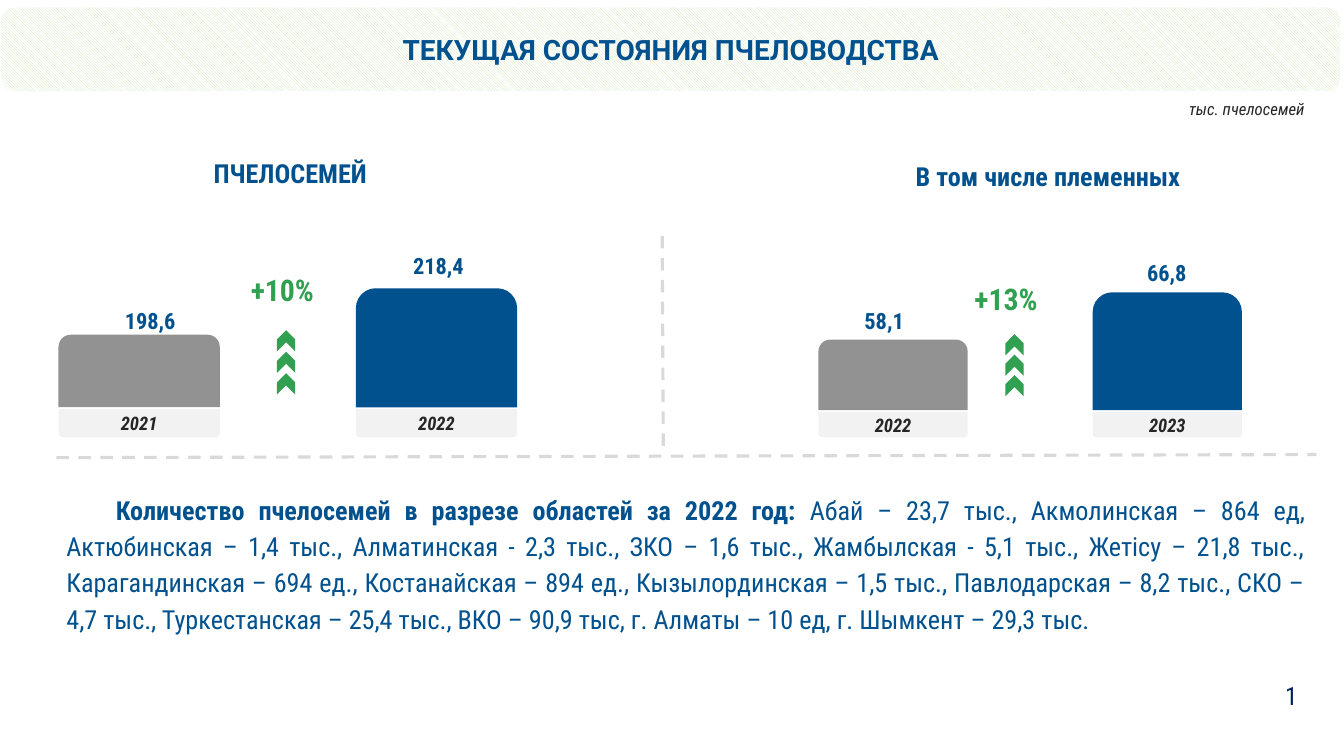
import pptx
import pptx.dml.color
import pptx.enum.dml
import pptx.enum.shapes
import pptx.enum.text
import pptx.oxml
import pptx.util

Pt = pptx.util.Pt
SHAPES = pptx.enum.shapes.MSO_SHAPE
ALIGN = pptx.enum.text.PP_ALIGN
ANCHOR = pptx.enum.text.MSO_ANCHOR
BLUE, GREEN, GRAY, DARK = "00518E", "31A050", "929292", "262626"
PALE, DIVIDER, WHITE = "F2F2F2", "D9D9D9", "FFFFFF"
CONDENSED = "Roboto Condensed"


def color(value):
    return pptx.dml.color.RGBColor.from_string(value)


def format_run(run, size, value, bold=False, italic=False, name=CONDENSED):
    run.font.name = name
    run.font.size = Pt(size)
    run.font.color.rgb = color(value)
    run.font.bold = bold
    run.font.italic = italic


def add_text(shapes, text, left, top, width, height, size, value, bold=False,
             italic=False, align=ALIGN.CENTER, anchor=ANCHOR.MIDDLE, spacing=None):
    box = shapes.add_textbox(Pt(left), Pt(top), Pt(width), Pt(height))
    frame = box.text_frame
    frame.word_wrap = True
    frame.auto_size = pptx.enum.text.MSO_AUTO_SIZE.SHAPE_TO_FIT_TEXT
    frame.vertical_anchor = anchor
    frame.text = text
    paragraph = frame.paragraphs[0]
    paragraph.alignment = align
    paragraph.line_spacing = spacing
    format_run(paragraph.runs[0], size, value, bold, italic)
    return paragraph


def add_block(shapes, kind, left, top, width, height, fill, rotation=0):
    shape = shapes.add_shape(kind, Pt(left), Pt(top), Pt(width), Pt(height))
    shape.shadow.inherit = False
    shape.rotation = rotation
    shape.fill.solid()
    shape.fill.fore_color.rgb = color(fill)
    shape.line.fill.background()


def add_divider(shapes, left, top, right, bottom):
    connector = shapes.add_connector(
        pptx.enum.shapes.MSO_CONNECTOR.STRAIGHT, Pt(left), Pt(top), Pt(right), Pt(bottom))
    connector.line.color.rgb = color(DIVIDER)
    connector.line.width = Pt(2.25)
    connector.line.dash_style = pptx.enum.dml.MSO_LINE.DASH
    properties = connector._element.spPr
    properties.append(pptx.oxml.parse_xml(
        '<a:effectLst xmlns:a="http://schemas.openxmlformats.org/drawingml/2006/main"/>'))


def add_header(shapes, text):
    banner = shapes.add_shape(SHAPES.ROUNDED_RECTANGLE, Pt(0), Pt(4.3), Pt(958.3), Pt(61.9))
    banner.shadow.inherit = False
    banner.fill.patterned()
    banner.fill.pattern = pptx.enum.dml.MSO_PATTERN.LIGHT_DOWNWARD_DIAGONAL
    banner.fill.fore_color.rgb = color("CBE2AE")
    banner.fill.back_color.rgb = color(WHITE)
    banner.line.color.rgb = color(WHITE)
    banner.line.width = Pt(2)
    frame = banner.text_frame
    frame.vertical_anchor = ANCHOR.MIDDLE
    frame.text = text
    frame.paragraphs[0].alignment = ALIGN.CENTER
    format_run(frame.paragraphs[0].runs[0], 20, BLUE, True, name="Roboto")


def add_bar(shapes, left, width, base, height, foot, fill, year, value, value_center, value_top):
    add_block(shapes, SHAPES.ROUND_2_SAME_RECTANGLE, left, base + 1.4, width, foot, PALE, 180)
    add_text(shapes, year, left - 1.2, base, width + 2.4, foot + 3, 13.3, DARK, True, True)
    add_block(shapes, SHAPES.ROUND_2_SAME_RECTANGLE, left, base - height, width, height, fill)
    add_text(shapes, value, value_center - 80, value_top, 160, 18.7, 16, BLUE, True,
             spacing=Pt(10))


def add_panel(slide, title, title_box, growth, growth_box, width, base, foot, bars):
    shapes = slide.shapes.add_group_shape().shapes
    add_text(shapes, title, *title_box, 18.7, BLUE, True)
    for left, height, fill, year, value, value_center, value_top in bars:
        add_bar(shapes, left, width, base, height, foot, fill, year, value,
                value_center, value_top)
    add_text(shapes, growth, *growth_box, 21.3, GREEN, True, align=ALIGN.LEFT)


def add_chevrons(shapes, left, top, step):
    for index in range(3):
        add_block(shapes, SHAPES.CHEVRON, left, top + index * step, 15.1, 13, GREEN, 270)


def add_regions(shapes, heading, details):
    paragraph = add_text(shapes, heading, 40.3, 346.3, 899.3, 137.5, 18.7, BLUE, True,
                         align=ALIGN.JUSTIFY, anchor=ANCHOR.TOP, spacing=1.15)
    paragraph._p.get_or_add_pPr().set("indent", str(Pt(35.3)))
    run = paragraph.add_run()
    run.text = details
    format_run(run, 18.7, BLUE)


def main():
    presentation = pptx.Presentation()
    presentation.slide_width = Pt(960)
    presentation.slide_height = Pt(540)
    slide = presentation.slides.add_slide(presentation.slide_layouts[6])
    shapes = slide.shapes

    add_header(shapes, "ТЕКУЩАЯ СОСТОЯНИЯ ПЧЕЛОВОДСТВА")
    add_text(shapes, "тыс. пчелосемей", 820.8, 68.4, 139.7, 20.2, 12, DARK, italic=True,
             anchor=ANCHOR.TOP, spacing=0.9)
    add_panel(slide, "ПЧЕЛОСЕМЕЙ", (10.8, 108.7, 393, 30.2),
              "+10%", (172.1, 190.1, 108.7, 33.1), 115.2, 290.9, 20.2,
              [(41.8, 51.8, GRAY, "2021", "198,6", 107.3, 223.9),
               (254.2, 85, BLUE, "2022", "218,4", 313.2, 185)])
    add_panel(slide, "В том числе племенных", (571, 110.9, 355, 30.2),
              "+13%", (689, 196.6, 141.1, 33.1), 106.6, 293, 18,
              [(584.6, 50.4, GRAY, "2022", "58,1", 631.6, 223.9),
               (780.5, 84.2, BLUE, "2023", "66,8", 833.4, 190.1)])
    add_chevrons(shapes, 196.8, 236.9, 15.4)
    add_chevrons(shapes, 717.1, 239.8, 14.6)
    add_divider(shapes, 473, 168.5, 473.8, 319)
    add_divider(shapes, 40.3, 326.9, 940.3, 324.7)
    add_regions(
        shapes, "Количество пчелосемей в разрезе областей за 2022 год: ",
        "Абай – 23,7 тыс., Акмолинская – 864 ед, Актюбинская – 1,4 тыс., "
        "Алматинская - 2,3 тыс., ЗКО – 1,6 тыс., Жамбылская - 5,1 тыс., "
        "Жетісу – 21,8 тыс., Карагандинская – 694 ед., Костанайская – 894 ед., "
        "Кызылординская – 1,5 тыс., Павлодарская – 8,2 тыс., СКО – 4,7 тыс., "
        "Туркестанская – 25,4 тыс., ВКО – 90,9 тыс, г. Алматы – 10 ед, "
        "г. Шымкент – 29,3 тыс.")
    add_text(shapes, "1", 910.8, 482.4, 42.5, 28.8, 18, "002060",
             align=ALIGN.LEFT, anchor=ANCHOR.TOP)
    presentation.save("out.pptx")


if __name__ == "__main__":
    main()
